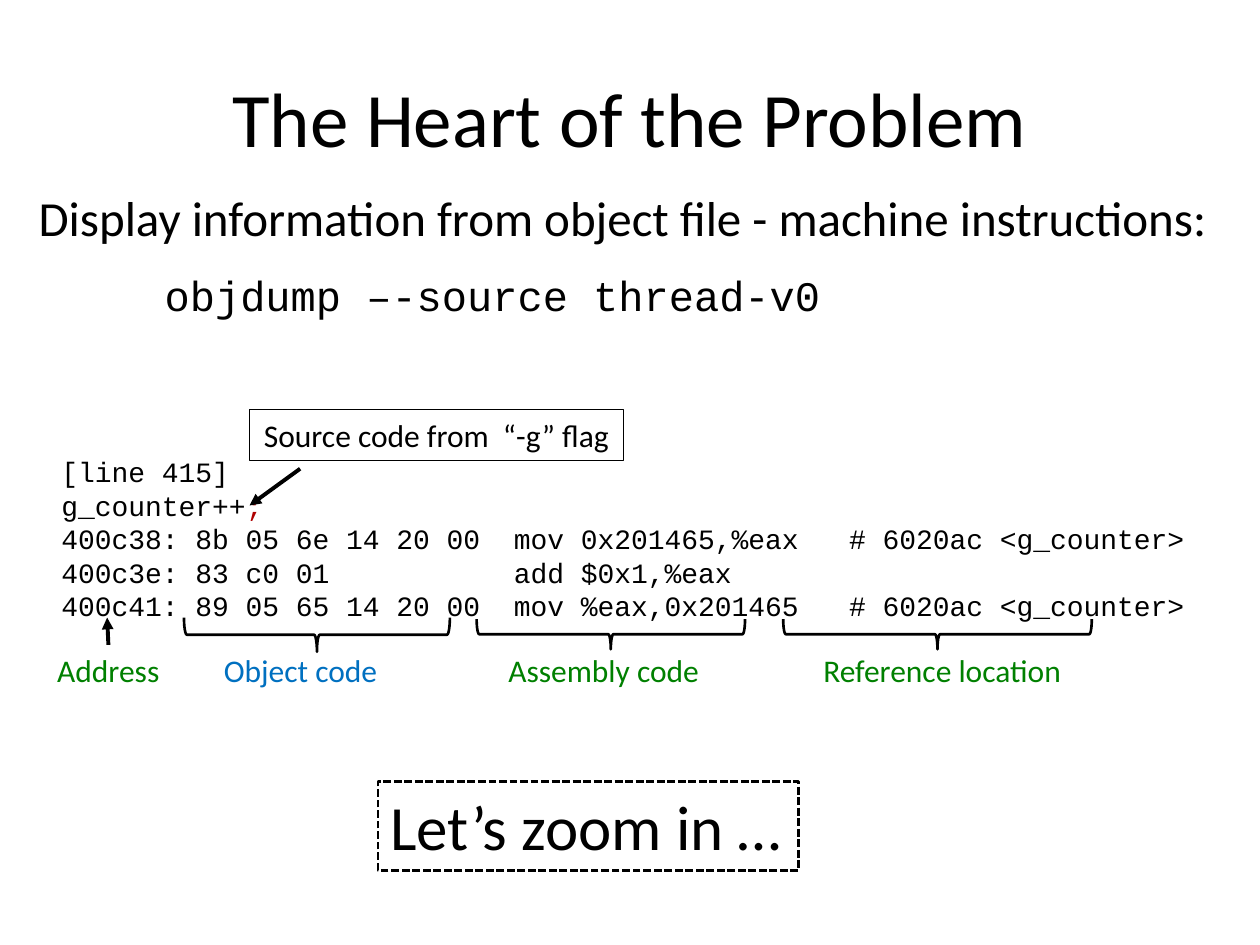
"""Build the slide that explains objdump output for a counter increment."""
from dataclasses import dataclass
from typing import Any, Optional

import pptx
import pptx.dml.color
import pptx.enum.dml
import pptx.enum.shapes
import pptx.enum.text
import pptx.oxml
import pptx.oxml.ns
import pptx.util
from lxml import etree

Cm = pptx.util.Cm
Pt = pptx.util.Pt
RGBColor = pptx.dml.color.RGBColor
Align = pptx.enum.text.PP_ALIGN
Anchor = pptx.enum.text.MSO_ANCHOR
Shape = pptx.enum.shapes.MSO_SHAPE

BLACK = RGBColor(0x00, 0x00, 0x00)
GREEN = RGBColor(0x00, 0x80, 0x00)
BLUE = RGBColor(0x00, 0x70, 0xC0)
RED = RGBColor(0xAF, 0x00, 0x00)
SANS = "Calibri"
MONO = "Courier New"


@dataclass
class Area:
    left: float
    top: float
    width: float
    height: float

    def lengths(self) -> tuple:
        return Cm(self.left), Cm(self.top), Cm(self.width), Cm(self.height)


@dataclass
class Label:
    text: str
    left: float
    width: float
    color: RGBColor
    brace: Optional[Area] = None


LABEL_TOP, LABEL_HEIGHT = 13.0, 1.02
LABELS = [
    Label("Address", 0.89, 2.59, GREEN),
    Label("Object code", 3.94, 4.24, BLUE, Area(3.71, 12.45, 5.36, 0.69)),
    Label("Assembly code", 9.86, 4.62, GREEN, Area(9.61, 12.48, 5.41, 0.61)),
    Label("Reference location", 16.33, 5.33, GREEN, Area(15.79, 12.48, 6.22, 0.61)),
]
CODE_TABS = (9.12, 15.88)
CODE_LINES = [
    [("[line 415]", BLACK)],
    [("g_counter++", BLACK), (";", RED)],
    [("400c38: 8b 05 6e 14 20 00\tmov 0x201465,%eax\t# 6020ac <g_counter>", BLACK)],
    [("400c3e: 83 c0 01\tadd $0x1,%eax", BLACK)],
    [("400c41: 89 05 65 14 20 00\tmov %eax,0x201465\t# 6020ac <g_counter>", BLACK)],
]


def add_span(para: Any, text: str, *, size: float, font: str = SANS,
             color: RGBColor = BLACK) -> None:
    span = para.add_run()
    span.text = text
    span.font.size = Pt(size)
    span.font.name = font
    span.font.color.rgb = color


def write(box: Any, text: str, *, size: float, color: RGBColor = BLACK,
          align: Any = Align.CENTER, anchor: Any = Anchor.TOP, wrap: bool = True) -> None:
    frame = box.text_frame
    frame.word_wrap = wrap
    frame.vertical_anchor = anchor
    para = frame.paragraphs[0]
    para.alignment = align
    add_span(para, text, size=size, color=color)


def add_frame(page: Any, area: Area, weight: float) -> Any:
    box = page.shapes.add_shape(Shape.RECTANGLE, *area.lengths())
    box.shadow.inherit = False
    box.fill.background()
    box.line.color.rgb = BLACK
    box.line.width = Pt(weight)
    return box


def add_brace(page: Any, area: Area) -> None:
    left = area.left + (area.width - area.height) / 2
    top = area.top + (area.height - area.width) / 2
    brace = page.shapes.add_shape(
        Shape.LEFT_BRACE, *Area(left, top, area.height, area.width).lengths())
    brace.rotation = 270
    brace.shadow.inherit = False
    brace.fill.background()
    brace.line.color.rgb = BLACK
    brace.line.width = Pt(1.5)


def add_arrow(page: Any, start: tuple, end: tuple) -> Any:
    arrow = page.shapes.add_connector(
        pptx.enum.shapes.MSO_CONNECTOR.STRAIGHT,
        Cm(start[0]), Cm(start[1]), Cm(end[0]), Cm(end[1]))
    arrow.line.color.rgb = BLACK
    arrow.line.width = Pt(2.25)
    etree.SubElement(arrow.line._get_or_add_ln(), pptx.oxml.ns.qn("a:tailEnd"), type="triangle")
    etree.SubElement(arrow._element.spPr, pptx.oxml.ns.qn("a:effectLst"))
    return arrow


def add_command(page: Any) -> None:
    box = page.shapes.add_textbox(*Area(0.53, 3.66, 24.33, 2.95).lengths())
    write(box, "Display information from object file - machine instructions:",
          size=28, align=Align.LEFT)
    para = box.text_frame.add_paragraph()
    para.space_before = Pt(13)
    para._p.get_or_add_pPr().set("marL", str(Cm(2.54)))
    add_span(para, "objdump –-source thread-v0", size=24, font=MONO)


def add_listing(page: Any) -> None:
    box = page.shapes.add_textbox(*Area(0.99, 9.04, 23.16, 3.68).lengths())
    frame = box.text_frame
    frame.word_wrap = True
    frame.margin_right = 0
    for number, line in enumerate(CODE_LINES):
        para = frame.add_paragraph() if number else frame.paragraphs[0]
        tabs = etree.SubElement(para._p.get_or_add_pPr(), pptx.oxml.ns.qn("a:tabLst"))
        for stop in CODE_TABS:
            etree.SubElement(tabs, pptx.oxml.ns.qn("a:tab"), pos=str(Cm(stop)), algn="l")
        for text, color in line:
            add_span(para, text, size=16, font=MONO, color=color)


def add_label(page: Any, label: Label) -> Any:
    area = Area(label.left, LABEL_TOP, label.width, LABEL_HEIGHT)
    box = page.shapes.add_textbox(*area.lengths())
    write(box, label.text, size=18, color=label.color)
    if label.brace:
        add_brace(page, label.brace)
    return box


def main() -> None:
    deck = pptx.Presentation()
    deck.slide_width, deck.slide_height = Cm(25.4), Cm(19.05)
    page = deck.slides.add_slide(deck.slide_layouts[5])

    title = page.shapes.title
    title.left, title.top, title.width, title.height = Area(1.27, 0.76, 22.86, 3.18).lengths()
    write(title, "The Heart of the Problem", size=44, anchor=Anchor.MIDDLE)

    add_command(page)
    add_listing(page)
    callout = add_frame(page, Area(5.03, 8.26, 7.54, 1.02), 0.75)
    write(callout, "Source code from  “-g” flag", size=18)
    add_arrow(page, (6.05, 9.45), (5.03, 10.19))

    address, *_ = [add_label(page, label) for label in LABELS]
    pointer = add_arrow(page, (2.18, LABEL_TOP), (2.16, 12.45))
    pointer.begin_connect(address, 0)

    zoom = add_frame(page, Area(7.62, 15.75, 8.48, 1.8), 1.5)
    zoom.line.dash_style = pptx.enum.dml.MSO_LINE.SQUARE_DOT
    write(zoom, "Let’s zoom in …", size=36, align=Align.LEFT, wrap=False)

    deck.save("out.pptx")


if __name__ == "__main__":
    main()
